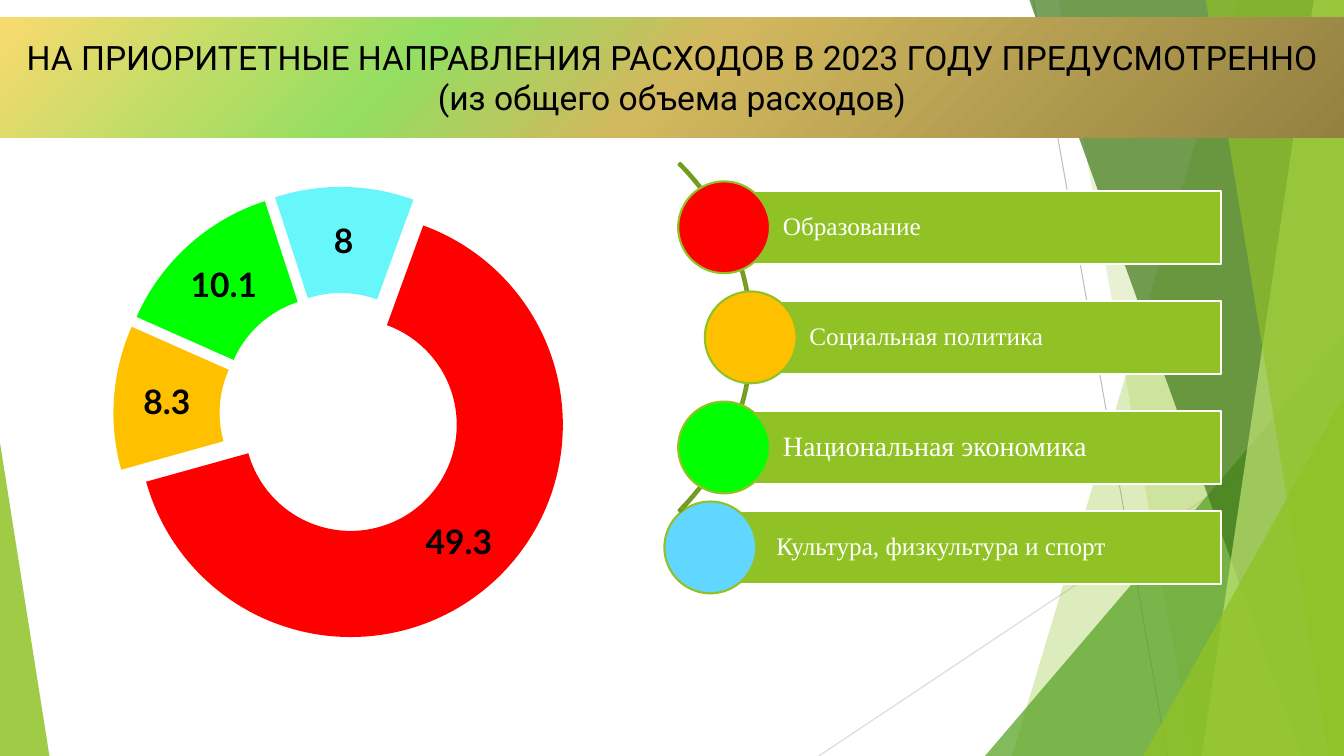
from lxml.etree import SubElement
from pptx import Presentation
from pptx.chart.data import CategoryChartData
from pptx.dml.color import RGBColor
from pptx.enum.chart import XL_CHART_TYPE
from pptx.enum.shapes import MSO_CONNECTOR, MSO_SHAPE
from pptx.enum.text import MSO_ANCHOR, PP_ALIGN
from pptx.oxml import parse_xml
from pptx.oxml.ns import nsdecls, qn
from pptx.util import Inches, Pt

W, H = Inches(13.33), Inches(7.5)
COLORS = {
    "green": "90C226", "leaf": "54A021", "forest": "3F7819", "lime": "C0E474",
    "arc": "739B1E", "grey": "BFBFBF", "silver": "D9D9D9",
    "white": "FFFFFF", "black": "000000",
    "education": "FF0000", "social": "FFC000", "economy": "00FF00",
    "culture": "61D6FF", "culture_slice": "67F6F9",
}
TITLE_STOPS = [(0, "948142"), (50, "D2B85E"), (69, "94DE61"), (100, "F9DA6F")]


def rgb(name):
    return RGBColor.from_string(COLORS[name])


def area(left, top, width, height):
    return (int(W * left / 100), int(H * top / 100),
            int(W * width / 100), int(H * height / 100))


def paint(sp, fill=None, line=None, weight=1.5, alpha=100):
    sp.shadow.inherit = False
    if fill:
        sp.fill.solid()
        sp.fill.fore_color.rgb = rgb(fill)
        if alpha < 100:
            color = sp._element.spPr.find(qn("a:solidFill"))[0]
            SubElement(color, qn("a:alpha"), val=str(alpha * 1000))
    else:
        sp.fill.background()
    if line:
        sp.line.color.rgb = rgb(line)
        sp.line.width = Pt(weight)
    else:
        sp.line.fill.background()


def style(p, font, size, color):
    for r in p.runs:
        r.font.name, r.font.size = font, Pt(size)
        r.font.color.rgb = rgb(color)


def add_facets(s, box):
    x, y, w, h = box

    def at(px, py):
        return int(x + w * px / 100), int(y + h * py / 100)

    def ray(start, end, color):
        c = s.shapes.add_connector(MSO_CONNECTOR.STRAIGHT, *at(*start), *at(*end))
        c.line.color.rgb = rgb(color)
        c.line.width = Pt(0.75)
        SubElement(c._element.spPr, qn("a:effectLst"))

    def band(top_left, bottom_left, color, alpha):
        fb = s.shapes.build_freeform(*at(top_left, 0))
        fb.add_line_segments([at(100, 0), at(100, 100), at(bottom_left, 100)])
        paint(fb.convert_to_shape(), color, alpha=alpha)

    def wedge(left, top, right, apex, color, alpha):
        x0, y0 = at(left, top)
        x1, y1 = at(right, 100)
        sp = s.shapes.add_shape(MSO_SHAPE.ISOSCELES_TRIANGLE, x0, y0, x1 - x0, y1 - y0)
        sp.adjustments[0] = apex
        paint(sp, color, alpha=alpha)

    ray((76.89, 0), (86.87, 100), "grey")
    ray((100, 53.73), (60.92, 100), "silver")
    band(92.12, 75.3, "green", 30)
    band(78.77, 88.75, "green", 20)
    wedge(73.29, 44.4, 100, 1, "leaf", 72)
    band(76.59, 96.85, "forest", 70)
    band(97.75, 89.42, "lime", 70)
    band(89.72, 98.87, "green", 65)
    wedge(85.07, 52.4, 100, 1, "green", 80)
    wedge(0, 58.53, 3.68, 0, "green", 85)


def add_title(s, box):
    sp = s.shapes.add_shape(MSO_SHAPE.RECTANGLE, *box)
    paint(sp)
    stops = "".join(f'<a:gs pos="{pos * 1000}"><a:srgbClr val="{c}"/></a:gs>'
                    for pos, c in TITLE_STOPS)
    spPr = sp._element.spPr
    spPr.replace(spPr.find(qn("a:noFill")), parse_xml(
        f'<a:gradFill {nsdecls("a")} rotWithShape="1"><a:gsLst>{stops}</a:gsLst>'
        '<a:path path="circle"><a:fillToRect l="100000" t="100000"/></a:path>'
        '<a:tileRect r="-100000" b="-100000"/></a:gradFill>'))
    tf = sp.text_frame
    tf.word_wrap = True
    tf.vertical_anchor = MSO_ANCHOR.MIDDLE
    p = tf.paragraphs[0]
    p.text = ("НА ПРИОРИТЕТНЫЕ НАПРАВЛЕНИЯ РАСХОДОВ В 2023 ГОДУ ПРЕДУСМОТРЕННО "
              "(из общего объема расходов)")
    p.alignment = PP_ALIGN.CENTER
    style(p, "Roboto", 24, "black")


def add_shares_chart(s, box):
    data = CategoryChartData()
    data.categories = ["1", "2", "3", "4"]
    data.add_series("Series 1", (49.3, 8.3, 10.1, 8))
    chart = s.shapes.add_chart(XL_CHART_TYPE.DOUGHNUT, *box, data).chart
    chart.has_legend = False
    chart.has_title = False
    chart.font.name, chart.font.size = "Lato", Pt(10)
    chart.font.color.rgb = rgb("black")

    plot = chart.plots[0]
    plot.vary_by_categories = True
    series = plot.series[0]
    for i, name in enumerate(["education", "social", "economy", "culture_slice"]):
        fmt = series.points[i].format
        fmt.fill.solid()
        fmt.fill.fore_color.rgb = rgb(name)
        fmt.line.fill.background()
    series._element.find(qn("c:dPt")).addprevious(
        parse_xml(f'<c:explosion {nsdecls("c")} val="14"/>'))

    labels = series.data_labels
    labels.show_value = True
    labels.show_percentage = False
    labels.font.name, labels.font.size = "Lato", Pt(24)
    labels.font.bold = True
    labels.font.color.rgb = rgb("black")

    plot_area = chart._chartSpace.chart.plotArea
    for tag, value in (("c:firstSliceAng", "20"), ("c:holeSize", "28")):
        for node in plot_area.iter(qn(tag)):
            node.set("val", value)
    for node in plot_area.findall(qn("c:layout")):
        plot_area.remove(node)
    spots = "".join(f'<c:{tag} val="{value}"/>' for tag, value in (
        ("layoutTarget", "inner"), ("xMode", "edge"), ("yMode", "edge"),
        ("x", 0.25), ("y", 0.2), ("w", 0.53), ("h", 0.77)))
    plot_area.insert(0, parse_xml(
        f'<c:layout {nsdecls("c")}><c:manualLayout>{spots}</c:manualLayout></c:layout>'))


def add_legend(s, box):
    x, y, w, h = box
    d = h / 5

    def add(kind, left, top, width, height):
        return s.shapes.add_shape(kind, int(x + left * d), int(y + top * d),
                                  int(width * d), int(height * d))

    def row(text, color, left, top, size=18, bar_gap=0.5, inset=0.64):
        bar_left = left + bar_gap
        bar = add(MSO_SHAPE.RECTANGLE, bar_left, top + 0.1, w / d - bar_left, 0.8)
        paint(bar, "green", "white")
        tf = bar.text_frame
        tf.word_wrap = True
        tf.vertical_anchor = MSO_ANCHOR.MIDDLE
        tf.margin_left = int(inset * d)
        p = tf.paragraphs[0]
        p.text = text
        p.alignment = PP_ALIGN.LEFT
        p.line_spacing = 0.9
        style(p, "Times New Roman", size, "white")
        paint(add(MSO_SHAPE.OVAL, left, top, 1, 1), color, "green")

    row("Культура, физкультура и спорт", "culture", 0, 3.49, bar_gap=0.67, inset=0.55)
    arc = add(MSO_SHAPE.BLOCK_ARC, -4.42, -0.99, 5.38, 5.38)
    for i, value in enumerate((189, 27, 0.005)):
        arc.adjustments[i] = value
    paint(arc, line="arc")
    row("Образование", "education", 0.15, 0)
    row("Социальная политика", "social", 0.44, 1.2)
    row("Национальная экономика", "economy", 0.15, 2.4, size=20)


def main():
    prs = Presentation()
    prs.slide_width, prs.slide_height = W, H
    s = prs.slides.add_slide(prs.slide_layouts[6])
    add_facets(s, area(0, 0, 100, 100))
    add_title(s, area(0, 2.27, 100, 15.87))
    add_shares_chart(s, area(-7.5, 6.8, 63.77, 82))
    add_legend(s, area(49.44, 24, 41.4, 60.67))
    prs.save("out.pptx")


if __name__ == "__main__":
    main()
